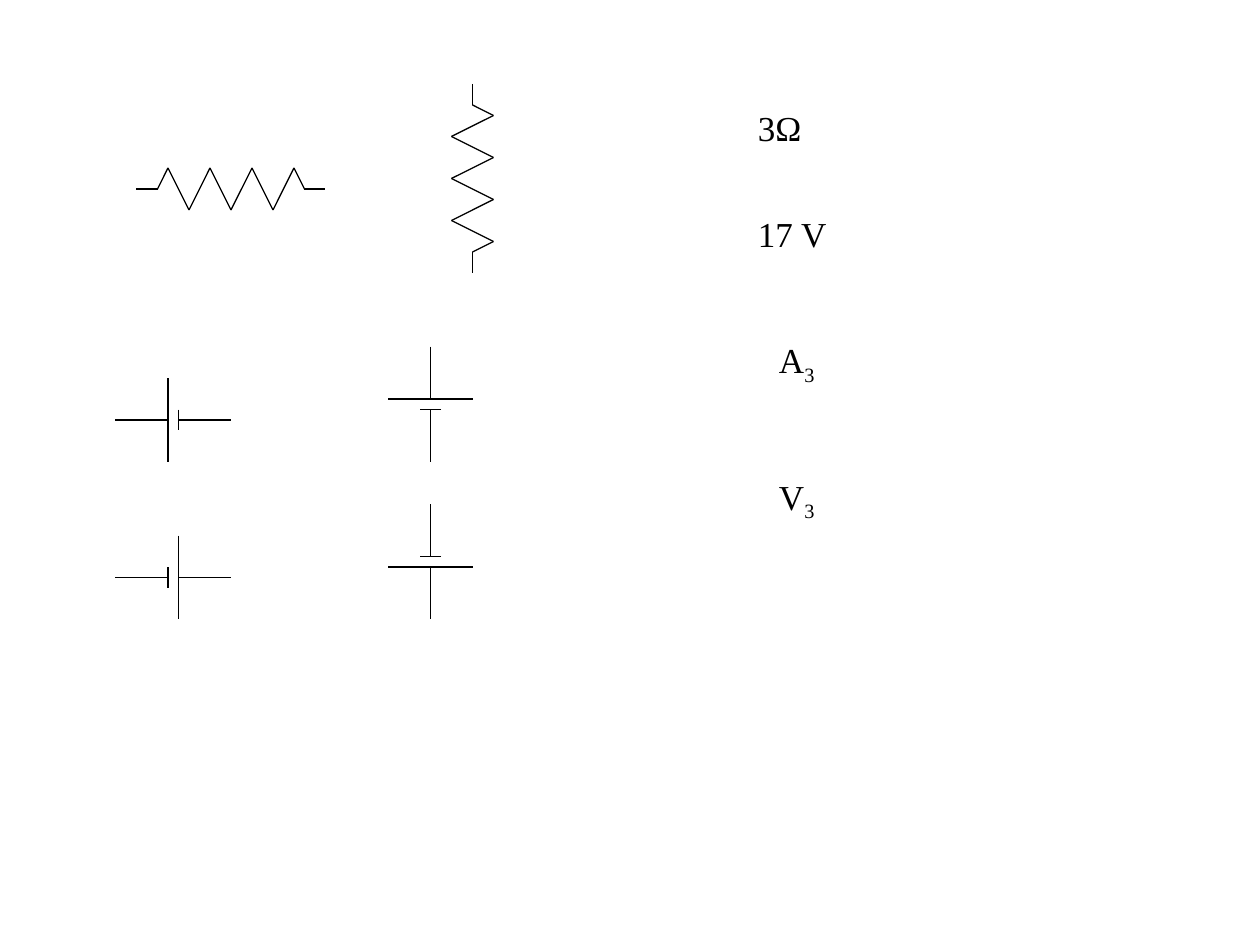
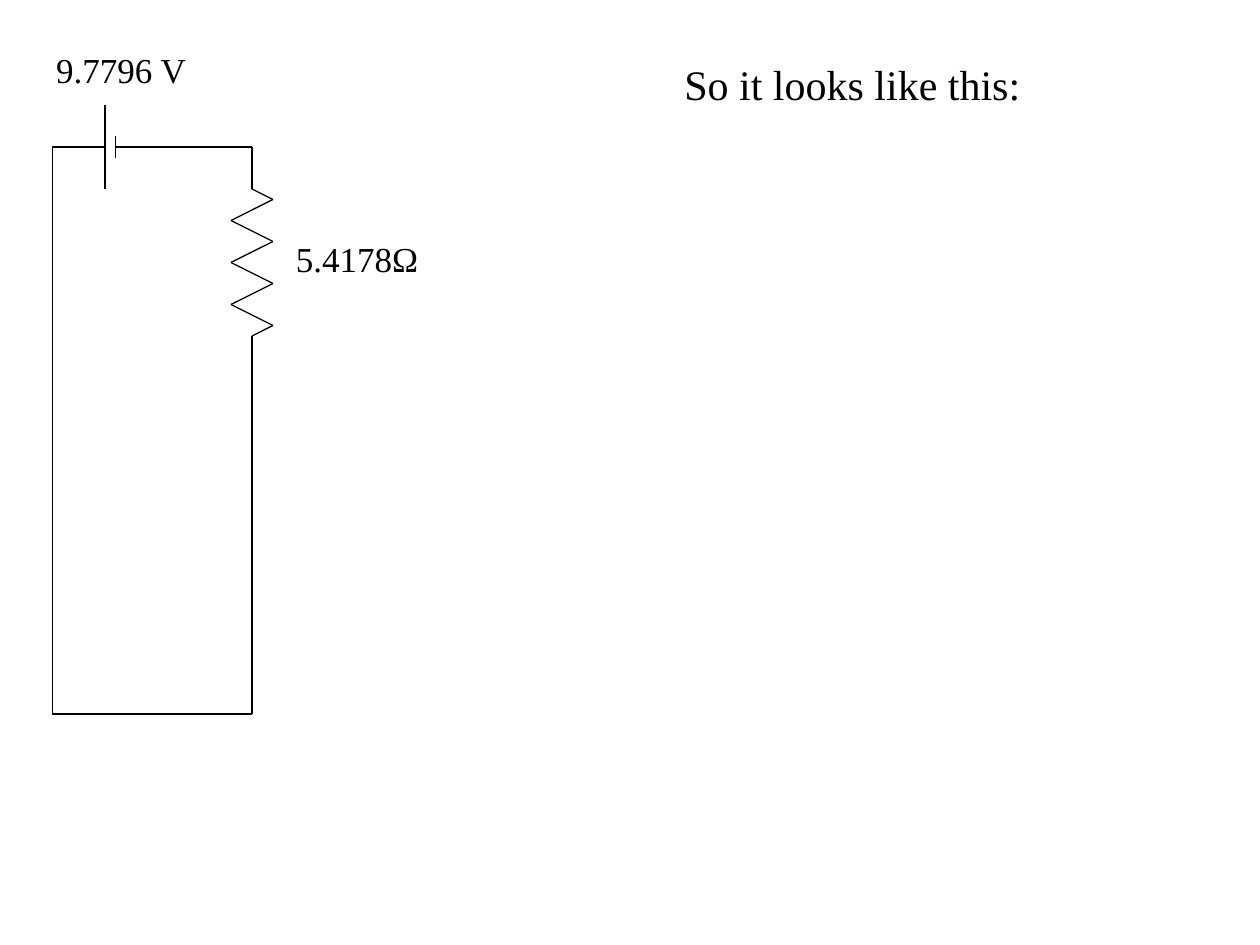
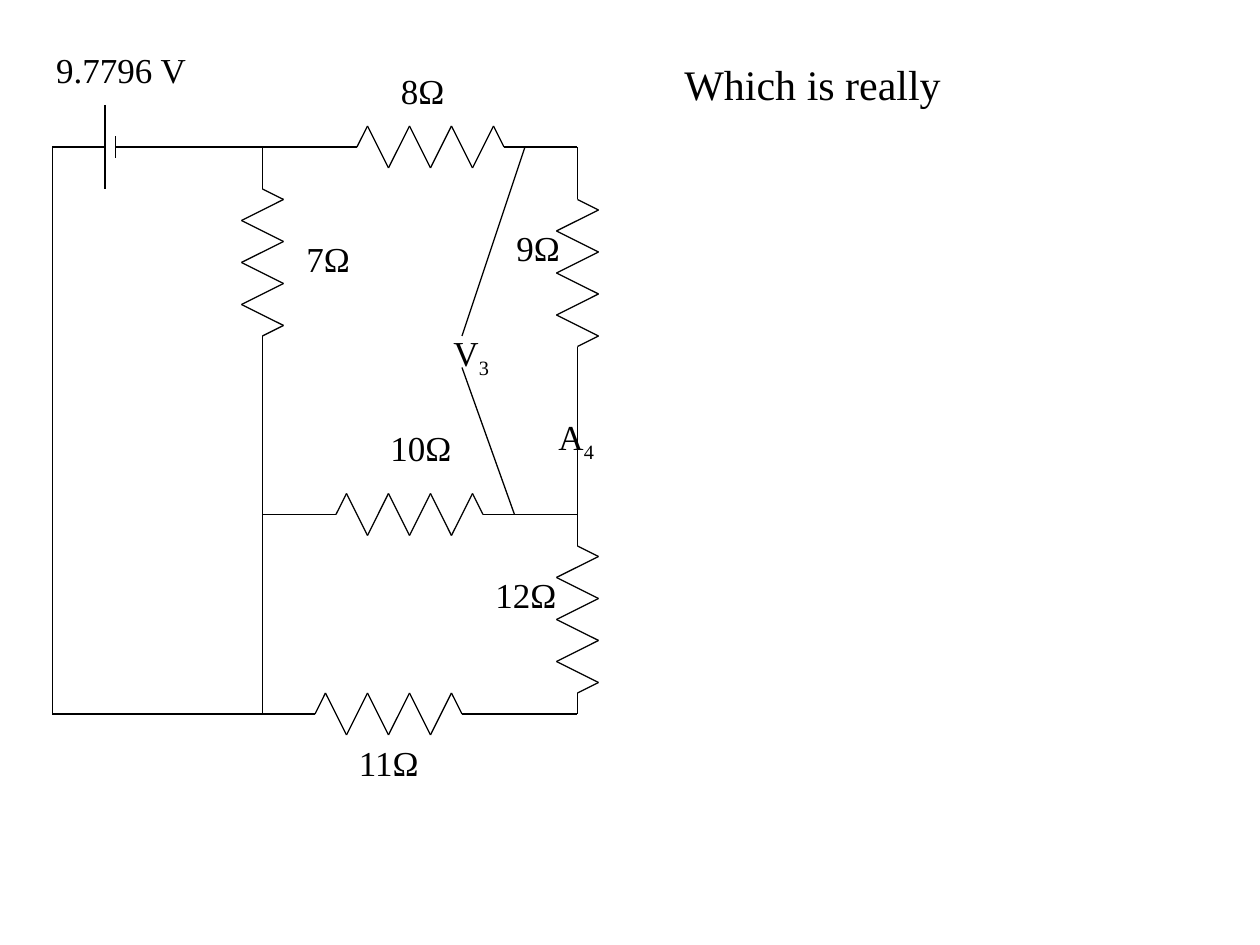
from itertools import pairwise

from lxml.etree import SubElement
from pptx import Presentation
from pptx.dml.color import RGBColor
from pptx.enum.shapes import MSO_CONNECTOR as Link
from pptx.enum.text import MSO_AUTO_SIZE as Fit, PP_ALIGN as Align
from pptx.oxml.ns import qn
from pptx.util import Pt

INK = RGBColor(0, 0, 0)
FONT = "Times New Roman"
OHM, WIDE_OHM, METER, VOLT = 39.6, 49.7, 35.3, 89.3


class Board:
    """Draws circuit parts and labels on the current slide."""

    def __init__(self):
        self.deck = Presentation()
        self.deck.slide_width, self.deck.slide_height = Pt(720), Pt(540)
        self.slide = None

    def page(self):
        self.slide = self.deck.slides.add_slide(self.deck.slide_layouts[6])

    def wire(self, start, end):
        ends = map(Pt, (*start, *end))
        line = self.slide.shapes.add_connector(Link.STRAIGHT, *ends)
        line.line.color.rgb = INK
        line.line.width = Pt(0.75)
        SubElement(line._element.spPr, qn("a:effectLst"))

    def trace(self, x, y, steps, down=False):
        spots = [(x - side, y + along) if down else (x + along, y + side)
                 for along, side in steps]
        for start, end in pairwise(spots):
            self.wire(start, end)

    def coil(self, x, y, pre, post, down=False):
        peaks = [(pre + 6 + 12 * i, 12 if i % 2 else -12) for i in range(7)]
        lead = [(0, 0)] if pre else []
        steps = [*lead, (pre, 0), *peaks, (pre + 84, 0), (pre + 84 + post, 0)]
        self.trace(x, y, steps, down)

    def cell(self, x, y, plates=(24, 6), tail=30, down=False):
        self.trace(x, y, [(0, 0), (30, 0)], down)
        for along, half in zip((30, 36), plates):
            self.trace(x, y, [(along, -half), (along, half)], down)
        self.trace(x, y, [(36, 0), (36 + tail, 0)], down)

    def text(self, x, y, wide, words, sub="", size=20, high=31, wrap=False, align=Align.LEFT):
        box = self.slide.shapes.add_textbox(*map(Pt, (x, y, wide, high)))
        frame = box.text_frame
        frame.word_wrap = wrap
        frame.auto_size = Fit.SHAPE_TO_FIT_TEXT
        para = frame.paragraphs[0]
        para.alignment = align
        para.font.name, para.font.size = FONT, Pt(size)
        para.font.color.rgb = INK
        para.add_run().text = words
        if sub:
            run = para.add_run()
            run.text = sub
            run._r.get_or_add_rPr().set("baseline", "-25000")

    def loop(self, title, side, foot):
        self.page()
        self.cell(30, 84, tail=side - 66)
        self.text(24.5, 24, VOLT, "9.7796 V", align=Align.CENTER)
        self.text(384, 30, 324, title, size=24, high=36, wrap=True)
        self.trace(foot, 408, [(0, 0), (30 - foot, 0)])
        self.wire((30, 84), (30, 408))
        self.coil(side, 84, 24, 216, down=True)


def parts(board):
    board.page()
    board.coil(78, 108, 12, 12)
    board.coil(270, 48, 12, 12, down=True)
    for y, top, plates in ((240, 198, (24, 6)), (330, 288, (6, 24))):
        board.cell(66, y, plates)
        board.cell(246, top, plates, down=True)
    board.text(426, 57.6, OHM, "3Ω")
    board.text(426, 118, 54, "17 V")
    board.text(438, 190, METER, "A", "3")
    board.text(438, 268, METER, "V", "3")


def simple(board):
    board.loop("So it looks like this:", 144, 144)
    board.text(162, 132, 84.2, "5.4178Ω")


def full(board):
    board.loop("Which is really", 150, 180)
    board.coil(330, 84, 30, 12, down=True)
    board.coil(330, 204, 108, 12, down=True)
    board.coil(180, 408, 0, 66)
    board.coil(150, 294, 42, 54)
    board.coil(150, 84, 54, 42)
    for x, y, wide, words in (
        (222, 36, OHM, "8Ω"),
        (168, 132, OHM, "7Ω"),
        (216, 240, WIDE_OHM, "10Ω"),
        (198, 420, WIDE_OHM, "11Ω"),
        (276, 324, WIDE_OHM, "12Ω"),
        (288, 126, OHM, "9Ω"),
    ):
        board.text(x, y, wide, words)
    board.text(312, 234, METER, "A", "4")
    board.text(252, 186, METER, "V", "3")
    board.wire((264, 210), (294, 294))
    board.wire((264, 192), (300, 84))


def main():
    board = Board()
    for draw in (parts, simple, full):
        draw(board)
    board.deck.save("out.pptx")


if __name__ == "__main__":
    main()
